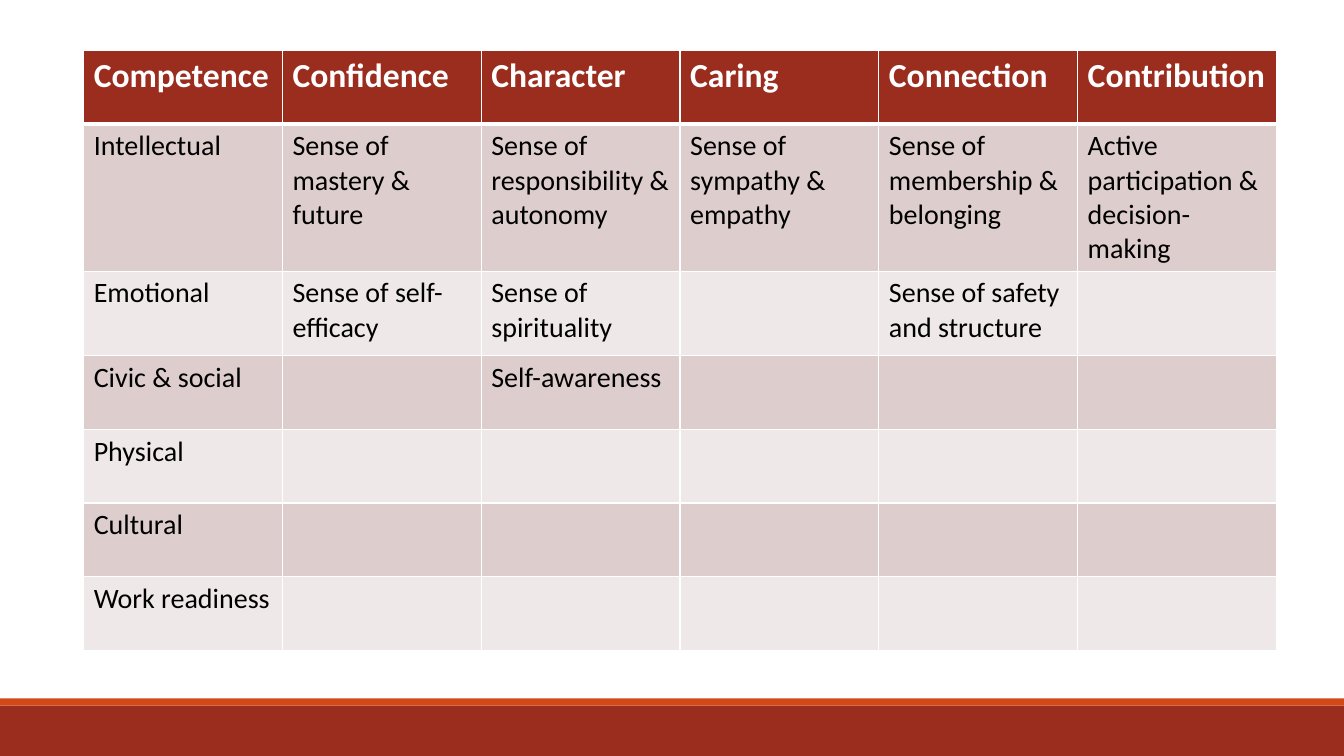
"""Build a slide with a table of six youth development outcomes."""
from pptx import Presentation
from pptx.dml.color import RGBColor
from pptx.enum.shapes import MSO_SHAPE
from pptx.oxml import parse_xml
from pptx.oxml.ns import nsdecls
from pptx.util import Inches, Pt

HEADS = ["Competence", "Confidence", "Character", "Caring", "Connection", "Contribution"]
ROWS = [
    ["Intellectual", "Sense of mastery & future", "Sense of responsibility & autonomy",
     "Sense of sympathy & empathy", "Sense of membership & belonging",
     "Active participation & decision-making"],
    ["Emotional", "Sense of self- efficacy", "Sense of spirituality", "",
     "Sense of safety and structure", ""],
    ["Civic & social", "", "Self-awareness", "", "", ""],
    ["Physical", "", "", "", "", ""],
    ["Cultural", "", "", "", "", ""],
    ["Work readiness", "", "", "", "", ""],
]
HEIGHTS = [0.73, 1.45, 0.84] + [0.73] * 4
BANDS = [(7, 0.5, "brick"), (6.93, 0.07, "orange")]
WIDE, HIGH = 13.33, 7.5
LEFT, TOP, WIDTH = 0.83, 0.5, 11.83
THEME = {
    "font": "Calibri", "head": 24, "body": 20, "thin": 1, "thick": 3,
    "brick": "9B2D1F", "orange": "D34817", "white": "FFFFFF", "black": "000000",
    "dark": "DECDCD", "light": "EFE8E8",
}


def color(name):
    return RGBColor.from_string(THEME[name])


def paint(item, name):
    item.fill.solid()
    item.fill.fore_color.rgb = color(name)


def border(cell, row):
    props = cell._tc.get_or_add_tcPr()
    thick = {"T": row == 1, "B": row == 0}
    for index, side in enumerate("LRTB"):
        size = THEME["thick" if thick.get(side) else "thin"]
        props.insert(index, parse_xml(
            f'<a:ln{side} {nsdecls("a")} w="{Pt(size)}"><a:solidFill>'
            f'<a:srgbClr val="{THEME["white"]}"/></a:solidFill></a:ln{side}>'))


def write(cell, text, head):
    run = cell.text_frame.paragraphs[0].add_run()
    run.text = text
    font = run.font
    font.name = THEME["font"]
    font.size = Pt(THEME["head" if head else "body"])
    font.bold = head
    font.color.rgb = color("white" if head else "black")


def add_bands(slide):
    for top, height, name in BANDS:
        band = slide.shapes.add_shape(
            MSO_SHAPE.RECTANGLE, 0, Inches(top), Inches(WIDE), Inches(height))
        band.shadow.inherit = False
        band.line.fill.background()
        paint(band, name)


def add_grid(slide):
    data = [HEADS] + ROWS
    grid = slide.shapes.add_table(
        len(data), len(HEADS), Inches(LEFT), Inches(TOP),
        Inches(WIDTH), Inches(sum(HEIGHTS))).table
    for column in grid.columns:
        column.width = Inches(WIDTH / len(HEADS))
    for r, texts in enumerate(data):
        grid.rows[r].height = Inches(HEIGHTS[r])
        fill = "brick" if r == 0 else "dark" if r % 2 else "light"
        for c, text in enumerate(texts):
            cell = grid.cell(r, c)
            paint(cell, fill)
            border(cell, r)
            if text:
                write(cell, text, r == 0)


def main():
    deck = Presentation()
    deck.slide_width, deck.slide_height = Inches(WIDE), Inches(HIGH)
    slide = deck.slides.add_slide(deck.slide_layouts[6])
    add_bands(slide)
    add_grid(slide)
    deck.save("out.pptx")


if __name__ == "__main__":
    main()
